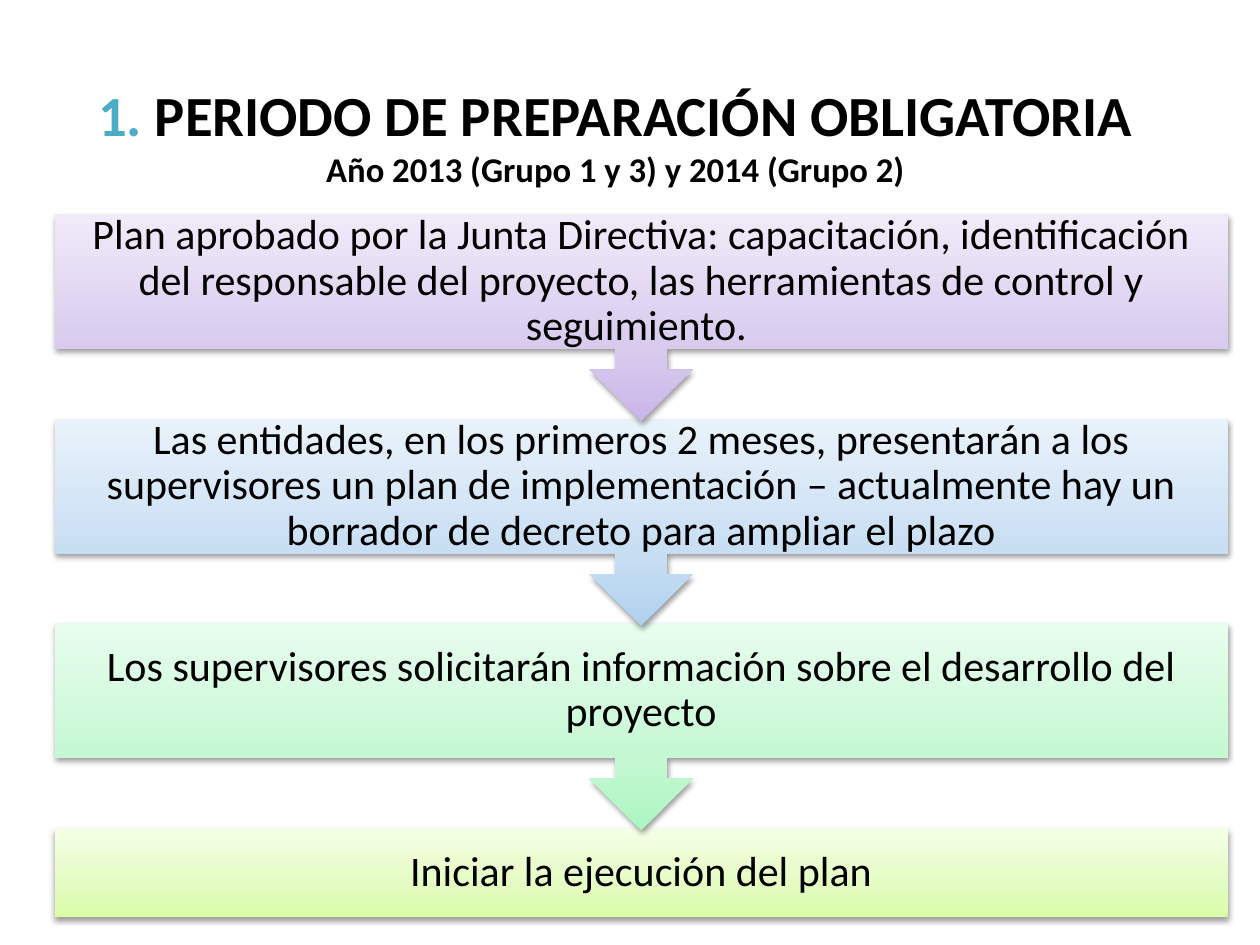
from lxml.etree import SubElement
from pptx import Presentation
from pptx.dml.color import RGBColor
from pptx.enum.shapes import MSO_SHAPE
from pptx.enum.text import MSO_ANCHOR, MSO_AUTO_SIZE, PP_ALIGN
from pptx.oxml import parse_xml
from pptx.oxml.ns import nsdecls, qn
from pptx.util import Cm, Pt

COLORS = {"text": "000000", "number": "4BACC6", "shadow": "000000"}

# Gradient of each step, from bottom to top
GRADIENTS = {
    "purple": ("C9B5E8", "D8CBEE", "F0EAF9"),
    "blue": ("B0D1EF", "C8DEF3", "E9F2FB"),
    "green": ("ACF6C1", "C5F8D3", "E8FDEE"),
    "lime": ("DAFDA7", "E4FCC2", "F5FFE7"),
}

STEPS = [
    ("purple", "Plan aprobado por la Junta Directiva: capacitación, identificación "
               "del responsable del proyecto, las herramientas de control y seguimiento. "),
    ("blue", "Las entidades, en los primeros 2 meses, presentarán a los supervisores "
             "un plan de implementación – actualmente hay un borrador de decreto "
             "para ampliar el plazo"),
    ("green", "Los supervisores solicitarán información sobre el desarrollo del proyecto"),
    ("lime", "Iniciar la ejecución del plan"),
]


def add_text(p, text, size=24, color="text", bold=False):
    r = p.add_run()
    r.text = text
    r.font.name = "Calibri"
    r.font.size = Pt(size)
    r.font.bold = bold
    r.font.color.rgb = RGBColor.from_string(COLORS[color])


def set_gradient(sp, colors):
    sp.fill.gradient()
    sp.fill.gradient_angle = 90
    stops = sp.element.spPr.find(qn("a:gradFill")).find(qn("a:gsLst"))
    for stop in list(stops):
        stops.remove(stop)
    for position, color in zip((0, 35, 100), colors):
        stop = SubElement(stops, qn("a:gs"), pos=str(position * 1000))
        SubElement(stop, qn("a:srgbClr"), val=color)


def set_shadow(sp):
    sp.element.spPr.append(parse_xml(
        f'<a:effectLst {nsdecls("a")}>'
        '<a:outerShdw blurRad="40000" dist="20000" dir="5400000" rotWithShape="0">'
        f'<a:srgbClr val="{COLORS["shadow"]}"><a:alpha val="38000"/></a:srgbClr>'
        '</a:outerShdw></a:effectLst>'))


def add_step(s, kind, colors, text, left, top, width, height):
    sp = s.shapes.add_shape(kind, left, top, width, height)
    set_gradient(sp, colors)
    sp.line.fill.background()
    set_shadow(sp)
    tf = sp.text_frame
    tf.word_wrap = True
    tf.vertical_anchor = MSO_ANCHOR.MIDDLE
    tf.margin_left = tf.margin_right = tf.margin_top = tf.margin_bottom = Cm(0.48)
    p = tf.paragraphs[0]
    p.alignment = PP_ALIGN.CENTER
    p.line_spacing = 0.9
    add_text(p, text)


def add_title(s, left, top, width, height):
    title = s.shapes.title
    title.left, title.top, title.width, title.height = left, top, width, height
    tf = title.text_frame
    tf.auto_size = MSO_AUTO_SIZE.NONE
    tf.vertical_anchor = MSO_ANCHOR.MIDDLE
    p = tf.paragraphs[0]
    p.alignment = PP_ALIGN.CENTER
    add_text(p, "1. ", size=32.4, color="number", bold=True)
    add_text(p, "PERIODO DE PREPARACIÓN OBLIGATORIA", size=32.4, bold=True)
    p.add_line_break()
    add_text(p, "Año 2013 (Grupo 1 y 3) y 2014 (Grupo 2)", size=19.8, bold=True)


def add_process(s, left, top, width, height):
    """Stack the steps; each arrow tip lies over the next step."""
    last_height = Cm(1.8)
    pitch = (height - last_height) // (len(STEPS) - 1)
    callout_height = pitch + Cm(0.05)
    last = len(STEPS) - 1
    # Last step first, so that the arrows stay in front
    for i, (color, text) in reversed(list(enumerate(STEPS))):
        kind = MSO_SHAPE.RECTANGLE if i == last else MSO_SHAPE.DOWN_ARROW_CALLOUT
        step_height = last_height if i == last else callout_height
        add_step(s, kind, GRADIENTS[color], text,
                 left, top + i * pitch, width, step_height)


def main():
    prs = Presentation()
    prs.slide_width, prs.slide_height = Cm(25.4), Cm(19.05)
    s = prs.slides.add_slide(prs.slide_layouts[5])
    add_process(s, Cm(1.1), Cm(4.32), Cm(23.65), Cm(14.17))
    add_title(s, Cm(0.71), Cm(1.32), Cm(23.39), Cm(2.79))
    prs.save("out.pptx")


if __name__ == "__main__":
    main()
